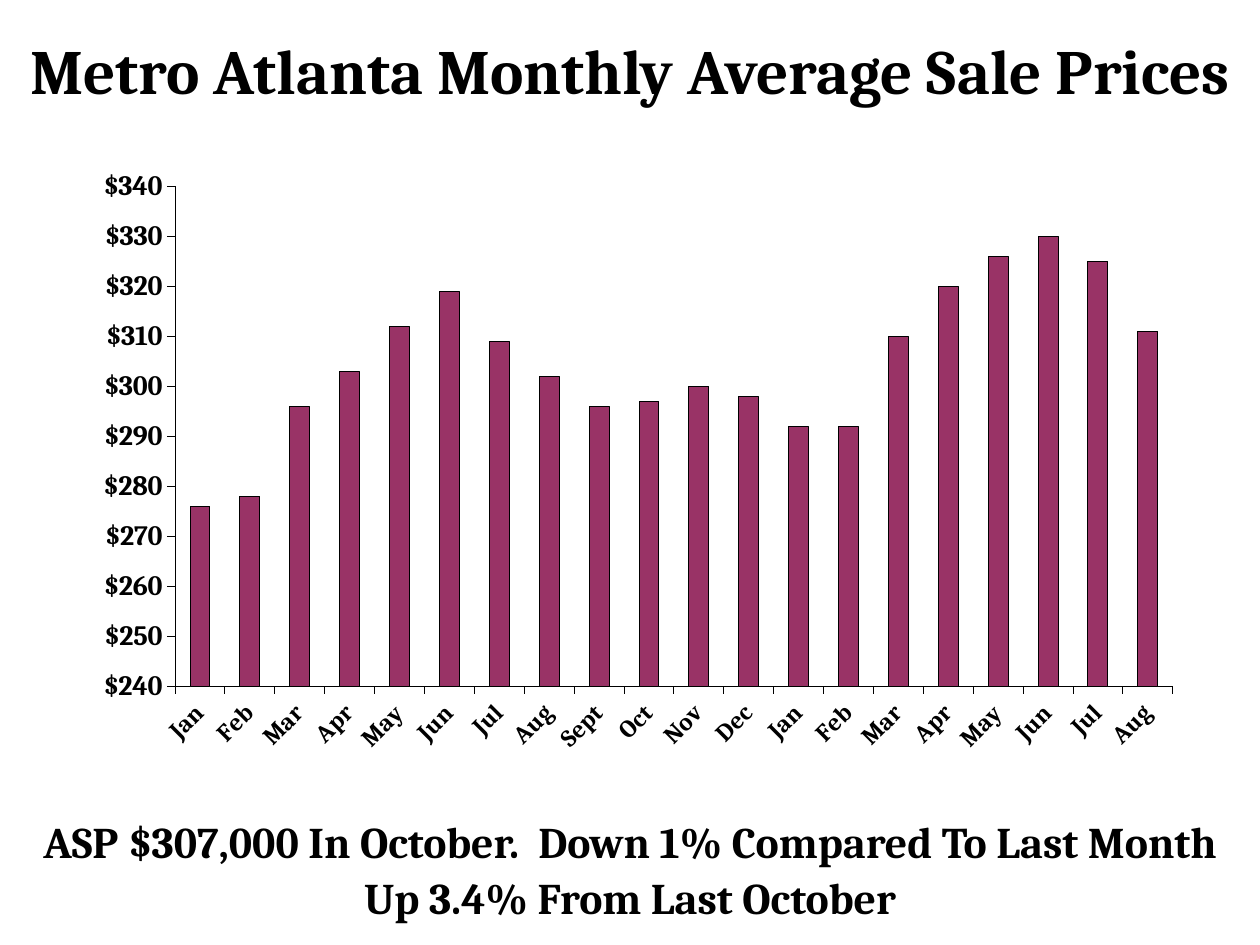
from dataclasses import dataclass

import pptx
import pptx.chart.data
import pptx.dml.color
import pptx.enum.chart
import pptx.enum.text
import pptx.oxml
import pptx.oxml.ns
import pptx.util

Inches = pptx.util.Inches
Pt = pptx.util.Pt
Color = pptx.dml.color.RGBColor


@dataclass(frozen=True)
class Theme:
    font: str = "Cambria"
    ink: Color = Color.from_string("000000")
    bar: Color = Color.from_string("993366")
    title_size: float = 36
    summary_size: float = 25
    price_size: float = 16
    month_size: float = 14


@dataclass(frozen=True)
class Area:
    left: float
    top: float
    width: float
    height: float

    def lengths(self) -> list:
        return [Inches(n) for n in (self.left, self.top, self.width, self.height)]


THEME = Theme()
MONTHS = ["Jan", "Feb", "Mar", "Apr", "May", "Jun", "Jul", "Aug", "Sept", "Oct", "Nov", "Dec"]
PRICES = [276, 278, 296, 303, 312, 319, 309, 302, 296, 297,
          300, 298, 292, 292, 310, 320, 326, 330, 325, 311]


def style_font(font, size: float) -> None:
    font.name = THEME.font
    font.size = Pt(size)
    font.bold = True
    font.color.rgb = THEME.ink


def add_text(page, area: Area, lines: list[str], *, size: float,
             spacing: float = 1.0, gap: float = 0) -> None:
    """Add centred lines of text, with a gap in points between them."""
    frame = page.shapes.add_textbox(*area.lengths()).text_frame
    frame.word_wrap = True
    frame.vertical_anchor = pptx.enum.text.MSO_ANCHOR.MIDDLE
    for index, line in enumerate(lines):
        para = frame.add_paragraph() if index else frame.paragraphs[0]
        para.alignment = pptx.enum.text.PP_ALIGN.CENTER
        para.line_spacing = spacing
        para.space_before = Pt(gap if index else 0)
        span = para.add_run()
        span.text = line
        style_font(span.font, size)


def style_axis(axis, size: float) -> None:
    axis.has_major_gridlines = False
    axis.major_tick_mark = pptx.enum.chart.XL_TICK_MARK.OUTSIDE
    axis.minor_tick_mark = pptx.enum.chart.XL_TICK_MARK.NONE
    axis.format.line.color.rgb = THEME.ink
    axis.format.line.width = Pt(0.25)
    style_font(axis.tick_labels.font, size)


def place_plot(chart, area: Area) -> None:
    """Fix the inner plot area, given as fractions of the chart."""
    plot_area = chart.plots[0]._element.getparent()
    for old in plot_area.findall(pptx.oxml.ns.qn("c:layout")):
        plot_area.remove(old)
    sizes = {"x": area.left, "y": area.top, "w": area.width, "h": area.height}
    modes = "".join(f'<c:{key}Mode val="edge"/>' for key in "xy")
    values = "".join(f'<c:{key} val="{size}"/>' for key, size in sizes.items())
    plot_area.insert(0, pptx.oxml.parse_xml(
        f'<c:layout {pptx.oxml.ns.nsdecls("c")}><c:manualLayout>'
        f'<c:layoutTarget val="inner"/>{modes}{values}'
        '</c:manualLayout></c:layout>'))


def add_price_chart(page, area: Area) -> None:
    data = pptx.chart.data.CategoryChartData(number_format='"$"#,##0')
    data.categories = [MONTHS[i % len(MONTHS)] for i in range(len(PRICES))]
    data.add_series("Series 1", PRICES)
    chart = page.shapes.add_chart(
        pptx.enum.chart.XL_CHART_TYPE.COLUMN_CLUSTERED, *area.lengths(), data).chart
    chart.has_legend = False
    chart.has_title = False
    style_font(chart.font, THEME.month_size)

    # Bars
    plot = chart.plots[0]
    plot.gap_width = 150
    plot.vary_by_categories = False
    bars = plot.series[0].format
    bars.fill.solid()
    bars.fill.fore_color.rgb = THEME.bar
    bars.line.color.rgb = THEME.ink
    bars.line.width = Pt(0.25)

    # Month axis, with slanted labels
    months = chart.category_axis
    style_axis(months, THEME.month_size)
    months.tick_label_position = pptx.enum.chart.XL_TICK_LABEL_POSITION.LOW
    label_body = months._element.find(
        f"{pptx.oxml.ns.qn('c:txPr')}/{pptx.oxml.ns.qn('a:bodyPr')}")
    label_body.set("rot", str(-45 * 60000))
    label_body.set("vert", "horz")

    # Price axis
    prices = chart.value_axis
    style_axis(prices, THEME.price_size)
    prices.minimum_scale, prices.maximum_scale, prices.major_unit = 240, 340, 10
    prices.tick_labels.number_format = '"$"#,##0'
    prices.tick_labels.number_format_is_linked = False

    place_plot(chart, Area(0.107, 0.088, 0.876, 0.717))


def main() -> None:
    deck = pptx.Presentation()
    deck.slide_width, deck.slide_height = Inches(10), Inches(7.5)
    page = deck.slides.add_slide(deck.slide_layouts[6])

    add_price_chart(page, Area(0.42, 0.99, 9.04, 5.54))
    add_text(page, Area(0, 0.2, 10, 0.7), ["Metro Atlanta Monthly Average Sale Prices"],
             size=THEME.title_size)
    add_text(page, Area(0, 6.4, 10, 1.05),
             ["ASP $307,000 In October.  Down 1% Compared To Last Month",
              "Up 3.4% From Last October"],
             size=THEME.summary_size, spacing=0.9, gap=5)

    deck.save("out.pptx")


if __name__ == "__main__":
    main()
